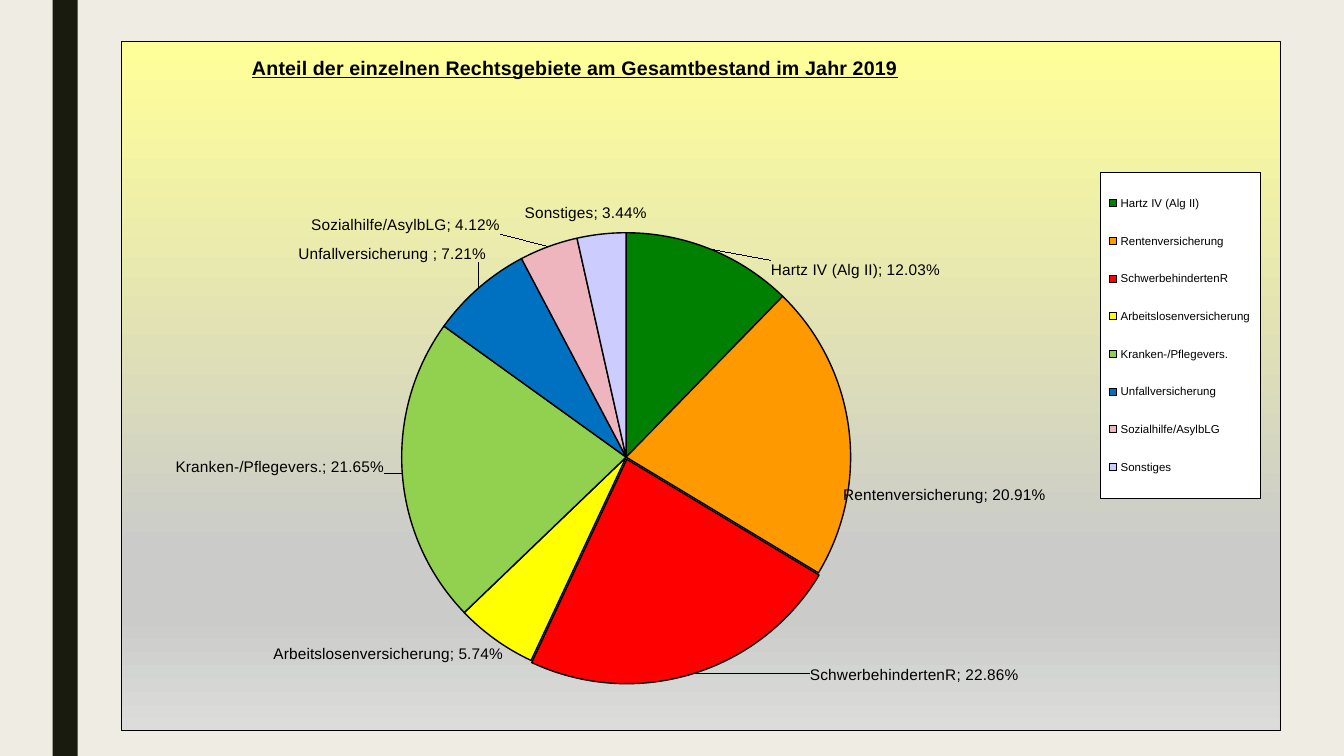
from dataclasses import dataclass

from lxml.etree import _Element as Element
from pptx import Presentation
from pptx.chart.chart import Chart
from pptx.chart.data import CategoryChartData
from pptx.dml.color import RGBColor
from pptx.enum.chart import XL_CHART_TYPE as ChartType, XL_LEGEND_POSITION as LegendPos
from pptx.enum.shapes import MSO_SHAPE as Shape
from pptx.oxml import parse_xml
from pptx.oxml.ns import nsdecls, qn
from pptx.util import Emu, Pt

PX = 9525
FONT = "Arial"
TITLE = "Anteil der einzelnen Rechtsgebiete am Gesamtbestand im Jahr 2019"
GRADIENT = [(0, "FFFF99"), (74, "CBCCC9"), (83, "CBCCC9"), (100, "DCDDDB")]


@dataclass
class Slice:
    name: str
    share: float
    color: str
    label_dx: float
    label_dy: float
    explosion: int = 0


SLICES = [
    Slice("Hartz IV (Alg II)", 0.1203, "008000", 0.05, 0.05),
    Slice("Rentenversicherung", 0.2091, "FF9900", -0.01, 0.11),
    Slice("SchwerbehindertenR", 0.2286, "FF0000", 0.1, -0.02, 1),
    Slice("Arbeitslosenversicherung", 0.0574, "FFFF00", 0.01, 0),
    Slice("Kranken-/Pflegevers.", 0.2165, "92D050", -0.01, -0.01),
    Slice("Unfallversicherung ", 0.0721, "0070C0", 0.01, -0.03),
    Slice("Sozialhilfe/AsylbLG", 0.0412, "EEB5BF", -0.04, -0.01),
    Slice("Sonstiges", 0.0344, "CCCCFF", 0.04, -0.01),
]


def px(n: int) -> Emu:
    return Emu(n * PX)


def rgb(color: str) -> RGBColor:
    return RGBColor.from_string(color)


def xml(text: str) -> Element:
    head, tail = text.split(">", 1)
    slash = "/" if head.endswith("/") else ""
    return parse_xml(f"{head.rstrip('/')} {nsdecls('c', 'a')}{slash}>{tail}")


def solid(color: str) -> str:
    return f'<a:solidFill><a:srgbClr val="{color}"/></a:solidFill>'


def frame(fill: str) -> Element:
    return xml(f'<c:spPr>{fill}<a:ln w="3175">{solid("000000")}</a:ln></c:spPr>')


def layout(modes: str = "", **values: float) -> str:
    parts = "".join(f'<c:{k} val="{v}"/>' for k, v in values.items())
    return f"<c:layout><c:manualLayout>{modes}{parts}</c:manualLayout></c:layout>"


def place(parent: Element, target: str = "", **values: float) -> None:
    for old in parent.findall(qn("c:layout")):
        parent.remove(old)
    modes = target + '<c:xMode val="edge"/><c:yMode val="edge"/>'
    new = xml(layout(modes, **values))
    overlay = parent.find(qn("c:overlay"))
    if overlay is None:
        parent.insert(0, new)
    else:
        overlay.addprevious(new)


def set_font(font, size: float, **attrs: bool) -> None:
    font.color.rgb = rgb("000000")
    for name, value in {"name": FONT, "size": Pt(size), **attrs}.items():
        setattr(font, name, value)


def labels_xml(slices: list[Slice]) -> Element:
    shows = {"LegendKey": 0, "Val": 1, "CatName": 1, "SerName": 0, "Percent": 0, "BubbleSize": 0}
    style = (
        '<c:numFmt formatCode="0.00%" sourceLinked="0"/>'
        "<c:spPr><a:noFill/><a:ln><a:noFill/></a:ln></c:spPr>"
        '<c:txPr><a:bodyPr wrap="none"/><a:p><a:pPr><a:defRPr sz="1100" b="0">'
        f'{solid("000000")}<a:latin typeface="{FONT}"/></a:defRPr></a:pPr></a:p></c:txPr>'
        '<c:dLblPos val="outEnd"/>'
        + "".join(f'<c:show{k} val="{v}"/>' for k, v in shows.items())
        + "<c:separator>; </c:separator>"
    )
    points = "".join(
        f'<c:dLbl><c:idx val="{i}"/>{layout(x=s.label_dx, y=s.label_dy)}{style}</c:dLbl>'
        for i, s in enumerate(slices)
    )
    return xml(f'<c:dLbls>{points}{style}<c:showLeaderLines val="1"/></c:dLbls>')


def style_title(chart: Chart, root: Element) -> None:
    tf = chart.chart_title.text_frame
    tf.text = TITLE
    set_font(tf.paragraphs[0].runs[0].font, 14, bold=True, underline=True)
    place(root.find(".//" + qn("c:title")), x=0.11, y=0.015)


def style_legend(chart: Chart, root: Element) -> None:
    chart.has_legend = True
    chart.legend.position = LegendPos.RIGHT
    chart.legend.include_in_layout = False
    set_font(chart.legend.font, 8.2)
    legend = root.find(".//" + qn("c:legend"))
    place(legend, x=0.845, y=0.19, w=0.138, h=0.473)
    legend.find(qn("c:overlay")).addnext(frame(solid("FFFFFF")))


def style_pie(chart: Chart, root: Element) -> None:
    plot = chart.plots[0]
    plot.vary_by_categories = True
    inner = '<c:layoutTarget val="inner"/>'
    place(root.find(".//" + qn("c:plotArea")), inner, x=0.23, y=0.278, w=0.412, h=0.651)
    for i, s in enumerate(SLICES):
        fmt = plot.series[0].points[i].format
        fmt.fill.solid()
        fmt.fill.fore_color.rgb = rgb(s.color)
        fmt.line.color.rgb = rgb("000000")
        fmt.line.width = Pt(1)
        if s.explosion:
            sp_pr = root.findall(".//" + qn("c:dPt"))[i].find(qn("c:spPr"))
            sp_pr.addprevious(xml(f'<c:explosion val="{s.explosion}"/>'))
    root.find(".//" + qn("c:cat")).addprevious(labels_xml(SLICES))


def style_area(root: Element) -> None:
    stops = "".join(
        f'<a:gs pos="{pos * 1000}"><a:srgbClr val="{color}"/></a:gs>' for pos, color in GRADIENT
    )
    fill = f'<a:gradFill><a:gsLst>{stops}</a:gsLst><a:lin ang="5400000" scaled="0"/></a:gradFill>'
    body = root.find(qn("c:chart"))
    body.addprevious(xml('<c:roundedCorners val="0"/>'))
    body.addnext(frame(fill))


def main() -> None:
    prs = Presentation()
    prs.slide_width, prs.slide_height = px(1280), px(720)
    slide = prs.slides.add_slide(prs.slide_layouts[6])
    slide.background.fill.solid()
    slide.background.fill.fore_color.rgb = rgb("EFEDE3")

    bar = slide.shapes.add_shape(Shape.RECTANGLE, px(50), px(0), px(24), px(720))
    bar.shadow.inherit = False
    bar.fill.solid()
    bar.fill.fore_color.rgb = rgb("191B0E")
    bar.line.fill.background()

    data = CategoryChartData(number_format="0.00%")
    data.categories = [s.name for s in SLICES]
    data.add_series("Series 1", [s.share for s in SLICES])
    box = (px(115), px(39), px(1104), px(657))
    chart = slide.shapes.add_chart(ChartType.PIE, *box, data).chart
    set_font(chart.font, 21.8)
    root = chart._chartSpace
    style_title(chart, root)
    style_legend(chart, root)
    style_pie(chart, root)
    style_area(root)
    prs.save("out.pptx")


if __name__ == "__main__":
    main()
